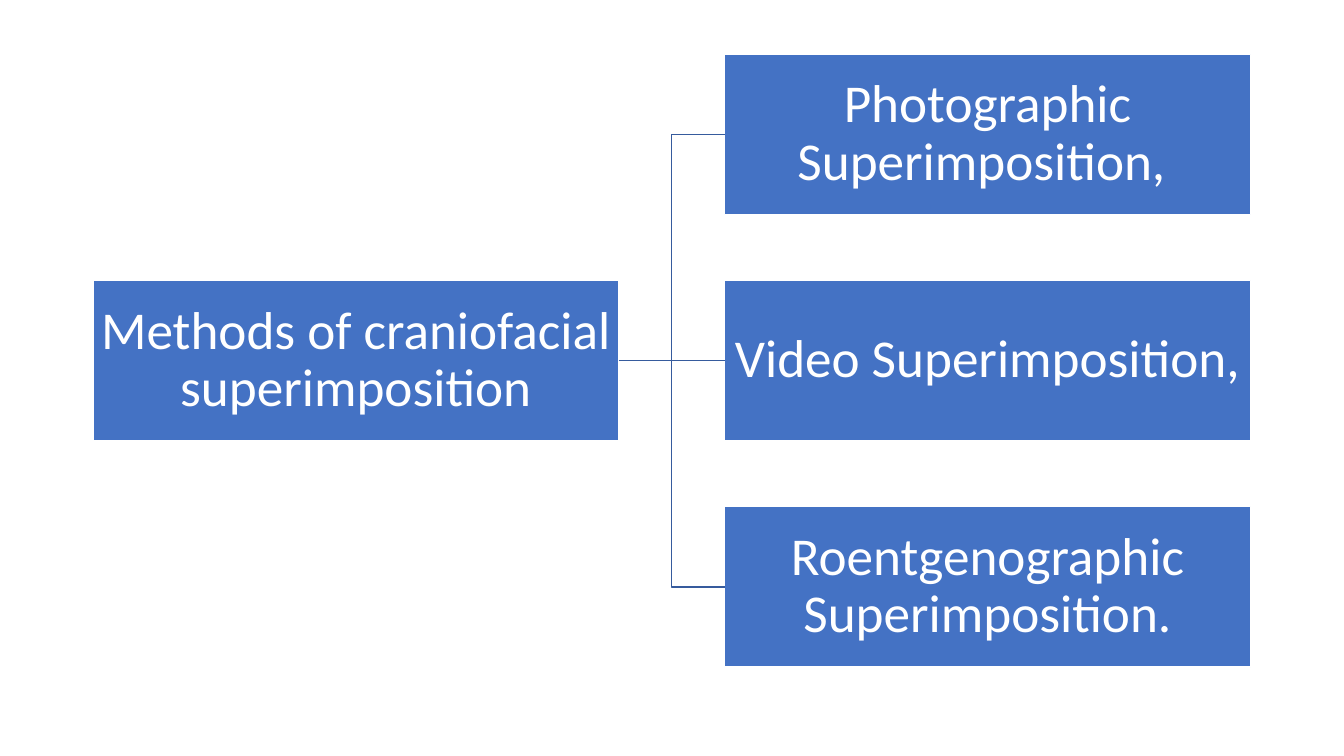
"""Build a slide with a tree of craniofacial superimposition methods."""
from lxml import etree
from pptx import Presentation
from pptx import util as u
from pptx.dml.color import RGBColor
from pptx.enum import shapes, text
from pptx.oxml import ns

BOX_WIDTH, BOX_HEIGHT = u.Cm(13.26), u.Cm(4.04)
TOPIC_LEFT, METHOD_LEFT = u.Cm(2.34), u.Cm(18.26)
FIRST_TOP, ROW_PITCH = u.Cm(1.37), u.Cm(5.7)
TOPIC_ROW = 1
METHODS = [
    "Photographic Superimposition, ",
    "Video Superimposition,",
    "Roentgenographic Superimposition.",
]


def paint(colour, value):
    """Set a colour format from a hex string."""
    colour.rgb = RGBColor.from_string(value)


def add_box(slide, left, row, label):
    """Add a labelled rectangle in the given row."""
    box = slide.shapes.add_shape(
        shapes.MSO_SHAPE.RECTANGLE, left, FIRST_TOP + row * ROW_PITCH, BOX_WIDTH, BOX_HEIGHT
    )
    box.shadow.inherit = False
    box.fill.solid()
    paint(box.fill.fore_color, "4472C4")
    paint(box.line.color, "FFFFFF")
    box.line.width = u.Pt(1)

    frame = box.text_frame
    frame.word_wrap = True
    frame.vertical_anchor = text.MSO_ANCHOR.MIDDLE
    frame.margin_left = frame.margin_right = u.Cm(0.07)
    frame.margin_top = frame.margin_bottom = u.Cm(0.07)
    paragraph = frame.paragraphs[0]
    paragraph.text = label
    paragraph.alignment = text.PP_ALIGN.CENTER
    paragraph.line_spacing = 0.9
    paragraph.font.name = "Calibri"
    paragraph.font.size = u.Pt(38)
    paint(paragraph.font.color, "FFFFFF")
    return box


def add_branch(slide, topic, method):
    """Join the topic's right side to a method's left side."""
    level = topic.top == method.top
    kind = shapes.MSO_CONNECTOR.STRAIGHT if level else shapes.MSO_CONNECTOR.ELBOW
    branch = slide.shapes.add_connector(kind, 0, 0, 0, 0)
    branch.begin_connect(topic, 3)
    branch.end_connect(method, 1)
    paint(branch.line.color, "365B9D")
    branch.line.width = u.Pt(1)
    etree.SubElement(branch._element.spPr, ns.qn("a:effectLst"))


def main():
    """Build and save the slide."""
    deck = Presentation()
    deck.slide_width, deck.slide_height = u.Cm(33.87), u.Cm(19.05)
    slide = deck.slides.add_slide(deck.slide_layouts[6])
    topic = add_box(slide, TOPIC_LEFT, TOPIC_ROW, "Methods of craniofacial superimposition")
    for row, label in enumerate(METHODS):
        method = add_box(slide, METHOD_LEFT, row, label)
        add_branch(slide, topic, method)
    deck.save("out.pptx")


if __name__ == "__main__":
    main()
